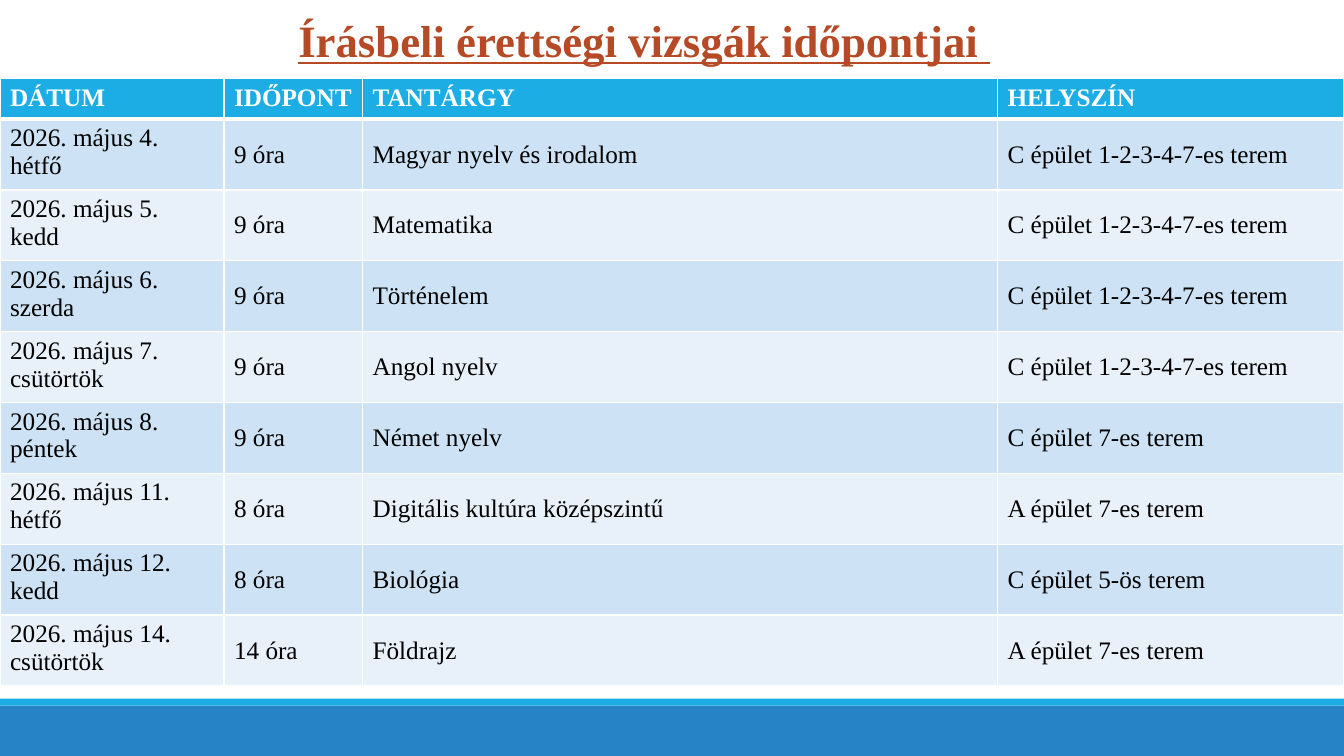
"""Builds the timetable slide of the written school-leaving exams."""
from dataclasses import dataclass

from lxml import etree
from pptx import Presentation
from pptx.dml.color import RGBColor
from pptx.enum.shapes import MSO_SHAPE
from pptx.enum.text import MSO_ANCHOR, MSO_AUTO_SIZE, PP_ALIGN
from pptx.oxml.ns import qn
from pptx.util import Pt

RECTANGLE = MSO_SHAPE.RECTANGLE
TOP, MIDDLE = MSO_ANCHOR.TOP, MSO_ANCHOR.MIDDLE
GROW = MSO_AUTO_SIZE.SHAPE_TO_FIT_TEXT
JUSTIFY = PP_ALIGN.JUSTIFY


@dataclass(frozen=True)
class Theme:
    font: str = "Times New Roman"
    title_size: int = 32
    table_size: int = 18
    title: str = "B64926"
    header: str = "1CADE4"
    footer: str = "2683C6"
    dark_row: str = "CDE3F5"
    light_row: str = "E8F1FA"
    white: str = "FFFFFF"
    black: str = "000000"


theme = Theme()


def style_font(font, size, color, **formats):
    font.color.rgb = RGBColor.from_string(color)
    for name, value in {"name": theme.font, "size": Pt(size), **formats}.items():
        setattr(font, name, value)


def add_borders(cell, widths):
    properties = cell._tc.get_or_add_tcPr()
    for side, width in widths.items():
        line = etree.SubElement(properties, qn(f"a:ln{side}"), w=str(Pt(width)))
        fill = etree.SubElement(line, qn("a:solidFill"))
        etree.SubElement(fill, qn("a:srgbClr"), val=theme.white)


header = ["DÁTUM", "IDŐPONT", "TANTÁRGY", "HELYSZÍN"]
large_rooms = "C épület 1-2-3-4-7-es terem"
exams = [
    ("2026. május 4.\nhétfő", "9 óra", "Magyar nyelv és irodalom", large_rooms),
    ("2026. május 5.\nkedd", "9 óra", "Matematika", large_rooms),
    ("2026. május 6.\nszerda", "9 óra", "Történelem", large_rooms),
    ("2026. május 7.\ncsütörtök", "9 óra", "Angol nyelv", large_rooms),
    ("2026. május 8.\npéntek", "9 óra", "Német nyelv", "C épület 7-es terem"),
    ("2026. május 11.\nhétfő", "8 óra", "Digitális kultúra középszintű", "A épület 7-es terem"),
    ("2026. május 12.\nkedd", "8 óra", "Biológia", "C épület 5-ös terem"),
    ("2026. május 14.\ncsütörtök", "14 óra", "Földrajz", "A épület 7-es terem"),
]
column_widths = [160, 99, 453.5, 247.5]
header_height, exam_height = 28, 50.6
page_width = sum(column_widths)

deck = Presentation()
deck.slide_width, deck.slide_height = Pt(page_width), Pt(540)
page = deck.slides.add_slide(deck.slide_layouts[6])

for top, height, color in [(504, 36, theme.footer), (499, 5, theme.header)]:
    band = page.shapes.add_shape(RECTANGLE, 0, Pt(top), Pt(page_width), Pt(height))
    band.shadow.inherit = False
    band.fill.solid()
    band.fill.fore_color.rgb = RGBColor.from_string(color)
    band.line.fill.background()

title_box = page.shapes.add_textbox(Pt(206), 0, Pt(521), Pt(48))
title_box.text_frame.word_wrap = False
title_box.text_frame.auto_size = GROW
title = title_box.text_frame.paragraphs[0]
for name, value in {"alignment": JUSTIFY, "line_spacing": 1.15, "space_after": Pt(10)}.items():
    setattr(title, name, value)
span = title.add_run()
span.text = "Írásbeli érettségi vizsgák időpontjai "
style_font(span.font, theme.title_size, theme.title, bold=True, underline=True)

rows = [header, *exams]
table_height = header_height + exam_height * len(exams)
timetable = page.shapes.add_table(
    len(rows), len(header), 0, Pt(56.3), Pt(page_width), Pt(table_height)
).table
for column, width in zip(timetable.columns, column_widths):
    column.width = Pt(width)

for row_index, texts in enumerate(rows):
    is_header = row_index == 0
    timetable.rows[row_index].height = Pt(header_height if is_header else exam_height)
    row_color = theme.dark_row if row_index % 2 else theme.light_row
    widths = {"L": 1, "R": 1, "T": 3 if row_index == 1 else 1, "B": 3 if is_header else 1}
    for column_index, text in enumerate(texts):
        cell = timetable.cell(row_index, column_index)
        cell.text = text
        cell.vertical_anchor = TOP if is_header or column_index == 0 else MIDDLE
        add_borders(cell, widths)
        cell.fill.solid()
        cell.fill.fore_color.rgb = RGBColor.from_string(theme.header if is_header else row_color)
        for para in cell.text_frame.paragraphs:
            text_color = theme.white if is_header else theme.black
            style_font(para.runs[0].font, theme.table_size, text_color, bold=is_header)

deck.save("out.pptx")
